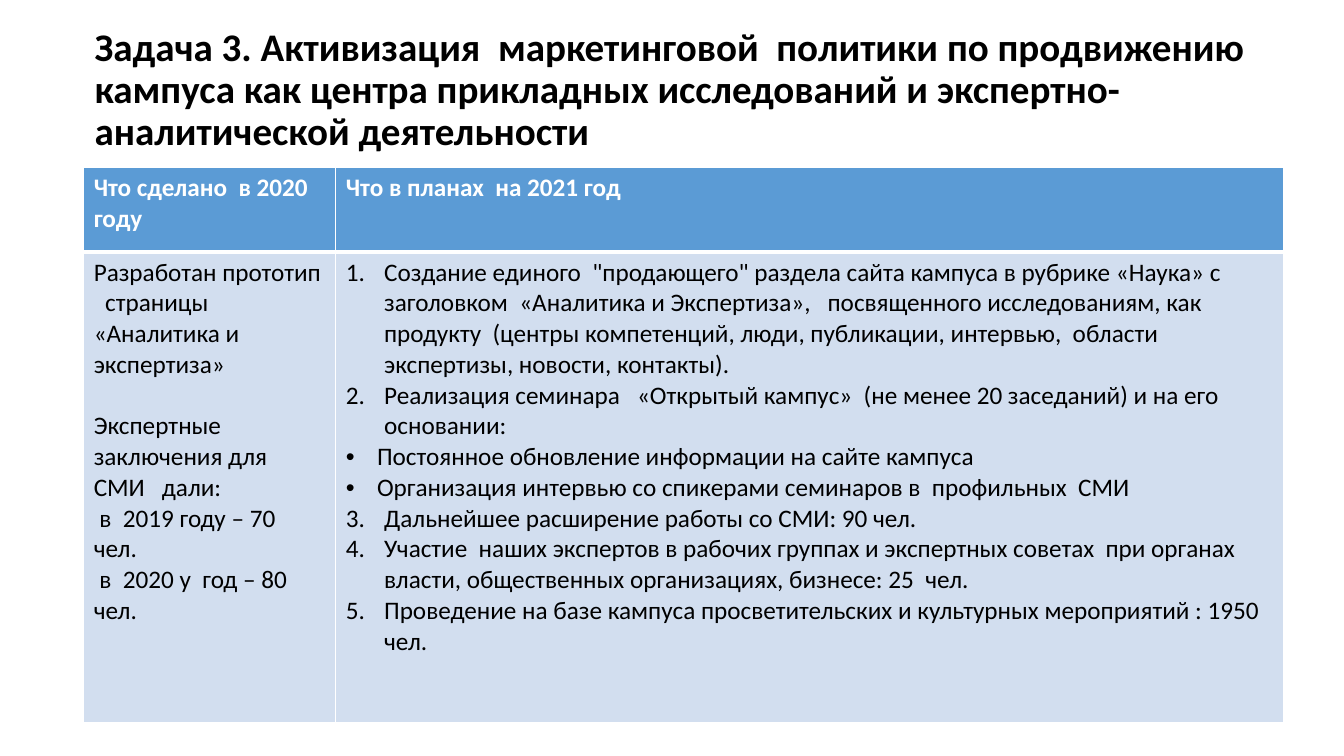
from lxml.etree import SubElement
from pptx import Presentation
from pptx.dml.color import RGBColor
from pptx.enum.text import MSO_ANCHOR
from pptx.oxml.ns import qn
from pptx.util import Inches, Pt

BLACK = RGBColor(0x00, 0x00, 0x00)
WHITE = RGBColor(0xFF, 0xFF, 0xFF)
HEADER_BLUE = RGBColor(0x5B, 0x9B, 0xD5)
BODY_BLUE = RGBColor(0xD2, 0xDE, 0xEF)
FONT = "Calibri"

TITLE = (
    "Задача 3. Активизация  маркетинговой  политики по продвижению кампуса "
    "как центра прикладных исследований и экспертно-аналитической деятельности"
)
HEADERS = ["Что сделано  в 2020 году", "Что в планах  на 2021 год"]
DONE = [
    "Разработан прототип   страницы  «Аналитика и экспертиза»",
    "Экспертные заключения для  СМИ   дали:",
    " в  2019 году – 70  чел.",
    " в  2020 у  год – 80  чел.",
]
# Each plan: number its list starts from (None for a bullet), text
PLANS = [
    (1, "Создание единого  \"продающего\" раздела сайта кампуса в рубрике «Наука» "
        "с заголовком  «Аналитика и Экспертиза»,   посвященного исследованиям, "
        "как продукту  (центры компетенций, люди, публикации, интервью,  области "
        "экспертизы, новости, контакты)."),
    (1, "Реализация семинара   «Открытый кампус»  (не менее 20 заседаний) "
        "и на его основании:"),
    (None, "Постоянное обновление информации на сайте кампуса"),
    (None, "Организация интервью со спикерами семинаров в  профильных  СМИ"),
    (3, "Дальнейшее расширение работы со СМИ: 90 чел."),
    (3, "Участие  наших экспертов в рабочих группах и экспертных советах  при "
        "органах власти, общественных организациях, бизнесе: 25  чел."),
    (3, "Проведение на базе кампуса просветительских и культурных мероприятий "
        ": 1950 чел."),
]


def add_run(paragraph, text, size, color, bold=False):
    run = paragraph.add_run()
    run.text = text
    run.font.name = FONT
    run.font.size = Pt(size)
    run.font.bold = bold
    run.font.color.rgb = color


def add_paragraphs(text_frame, texts, color, bold=False):
    for index, text in enumerate(texts):
        paragraph = text_frame.add_paragraph() if index else text_frame.paragraphs[0]
        add_run(paragraph, text, 18, color, bold)


def set_list_marker(paragraph, start):
    """Number the paragraph from start, or give it a bullet if start is None."""
    indent = Inches(0.31 if start is None else 0.38)
    properties = paragraph._p.get_or_add_pPr()
    properties.set("marL", str(indent))
    properties.set("indent", str(-indent))
    if start is None:
        SubElement(properties, qn("a:buFont"), typeface="Arial")
        SubElement(properties, qn("a:buChar"), char="•")
    else:
        SubElement(properties, qn("a:buFont"), typeface="+mj-lt")
        SubElement(properties, qn("a:buAutoNum"), type="arabicPeriod", startAt=str(start))


def style_cell(cell, fill_color, top_width, bottom_width):
    properties = cell._tc.get_or_add_tcPr()
    borders = {"a:lnL": 1, "a:lnR": 1, "a:lnT": top_width, "a:lnB": bottom_width}
    for tag, width in borders.items():
        line = SubElement(properties, qn(tag), w=str(Pt(width)))
        SubElement(SubElement(line, qn("a:solidFill")), qn("a:srgbClr"), val=str(WHITE))
    cell.fill.solid()
    cell.fill.fore_color.rgb = fill_color


def add_title(slide, left, top, width, height):
    text_frame = slide.shapes.add_textbox(left, top, width, height).text_frame
    text_frame.word_wrap = True
    text_frame.vertical_anchor = MSO_ANCHOR.MIDDLE
    paragraph = text_frame.paragraphs[0]
    paragraph.line_spacing = 0.9
    add_run(paragraph, TITLE, 27.9, BLACK, bold=True)


def add_plan_table(slide, left, top, width, height):
    table = slide.shapes.add_table(2, 2, left, top, width, height).table
    done_width, header_height = Inches(2.5), Inches(0.84)
    table.columns[0].width = done_width
    table.columns[1].width = width - done_width
    table.rows[0].height = header_height
    table.rows[1].height = height - header_height

    for column, header in enumerate(HEADERS):
        header_cell, body_cell = table.cell(0, column), table.cell(1, column)
        style_cell(header_cell, HEADER_BLUE, 1, 3)
        style_cell(body_cell, BODY_BLUE, 3, 1)
        add_paragraphs(header_cell.text_frame, [header], WHITE, bold=True)

    done_frame = table.cell(1, 0).text_frame
    add_paragraphs(done_frame, DONE, BLACK)
    done_frame.paragraphs[1].space_before = Pt(22)

    plans_frame = table.cell(1, 1).text_frame
    add_paragraphs(plans_frame, [text for _, text in PLANS], BLACK)
    for paragraph, (start, _) in zip(plans_frame.paragraphs, PLANS):
        set_list_marker(paragraph, start)


def main():
    presentation = Presentation()
    presentation.slide_width = Inches(13.33)
    presentation.slide_height = Inches(7.5)
    slide = presentation.slides.add_slide(presentation.slide_layouts[6])
    add_title(slide, Inches(0.84), Inches(0.15), Inches(11.91), Inches(1.5))
    add_plan_table(slide, Inches(0.83), Inches(1.66), Inches(11.9), Inches(5.51))
    presentation.save("out.pptx")


if __name__ == "__main__":
    main()
